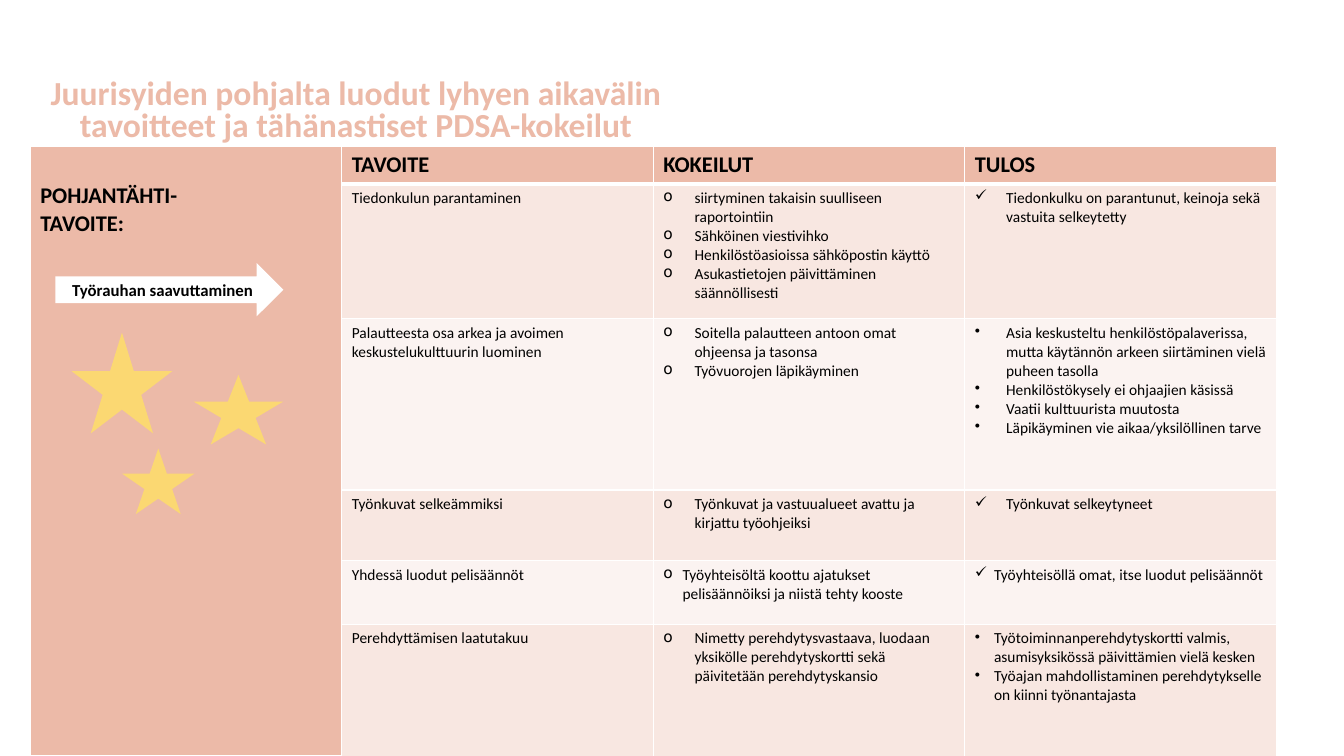
from dataclasses import dataclass

from lxml.etree import SubElement
from pptx import Presentation
from pptx.dml.color import RGBColor
from pptx.enum.shapes import MSO_SHAPE as Preset
from pptx.enum.text import MSO_ANCHOR as Anchor, MSO_AUTO_SIZE as AutoSize, PP_ALIGN as Align
from pptx.oxml.ns import qn
from pptx.util import Pt

PX = 9144


@dataclass(frozen=True)
class Theme:
    font: str = "Calibri"
    peach: str = "ECBAA8"
    band: tuple = ("F8E7E1", "FBF3F1")
    white: str = "FFFFFF"
    black: str = "000000"
    star: str = "FBD872"
    title: int = 24
    heading: int = 16
    label: int = 12
    body: int = 11


THEME = Theme()
TITLE = "Juurisyiden pohjalta luodut lyhyen aikavälin tavoitteet ja tähänastiset PDSA-kokeilut"
NORTH_STAR = "POHJANTÄHTI-\nTAVOITE:"
HEADINGS = ["TAVOITE", "KOKEILUT", "TULOS"]
ROW_HEIGHTS = [36, 134, 170, 70, 63, 132]
WIDE, NARROW = 31, 19
GOALS = [
    ("Tiedonkulun parantaminen",
     ("o", WIDE, ["siirtyminen takaisin suulliseen raportointiin",
                  "Sähköinen viestivihko",
                  "Henkilöstöasioissa sähköpostin käyttö",
                  "Asukastietojen päivittäminen säännöllisesti"]),
     ("✓", WIDE, ["Tiedonkulku on parantunut, keinoja sekä vastuita selkeytetty"])),
    ("Palautteesta osa arkea ja avoimen keskustelukulttuurin luominen",
     ("o", WIDE, ["Soitella palautteen antoon omat ohjeensa ja tasonsa",
                  "Työvuorojen läpikäyminen"]),
     ("•", WIDE, ["Asia keskusteltu henkilöstöpalaverissa, mutta käytännön arkeen "
                  "siirtäminen vielä puheen tasolla",
                  "Henkilöstökysely ei ohjaajien käsissä",
                  "Vaatii kulttuurista muutosta",
                  "Läpikäyminen vie aikaa/yksilöllinen tarve"])),
    ("Työnkuvat selkeämmiksi",
     ("o", WIDE, ["Työnkuvat ja vastuualueet avattu ja kirjattu työohjeiksi"]),
     ("✓", WIDE, ["Työnkuvat selkeytyneet"])),
    ("Yhdessä luodut pelisäännöt",
     ("o", NARROW, ["Työyhteisöltä koottu ajatukset pelisäännöiksi ja niistä tehty kooste"]),
     ("✓", NARROW, ["Työyhteisöllä omat, itse luodut pelisäännöt"])),
    ("Perehdyttämisen laatutakuu",
     ("o", WIDE, ["Nimetty perehdytysvastaava, luodaan yksikölle perehdytyskortti sekä "
                  "päivitetään perehdytyskansio"]),
     ("•", NARROW, ["Työtoiminnanperehdytyskortti valmis, asumisyksikössä päivittämien vielä kesken",
                    "Työajan mahdollistaminen perehdytykselle on kiinni työnantajasta"])),
]


def scaled(*lengths):
    return [length * PX for length in lengths]


def format_text(frame, size, color, bold=False):
    for para in frame.paragraphs:
        for span in para.runs:
            span.font.name = THEME.font
            span.font.size = Pt(size)
            span.font.bold = bold
            span.font.color.rgb = RGBColor.from_string(color)


def add_bullet(para, mark, indent):
    properties = para._p.get_or_add_pPr()
    properties.set("marL", str(indent * PX))
    properties.set("indent", str(-indent * PX))
    SubElement(properties, qn("a:buChar"), char=mark)


def style_cell(cell, color, bottom_width=1):
    properties = cell._tc.get_or_add_tcPr()
    for side, width in (("lnL", 1), ("lnR", 1), ("lnT", 1), ("lnB", bottom_width)):
        line = SubElement(properties, qn(f"a:{side}"), w=str(Pt(width)))
        paint = SubElement(line, qn("a:solidFill"))
        SubElement(paint, qn("a:srgbClr"), val=THEME.white)
    cell.fill.solid()
    cell.fill.fore_color.rgb = RGBColor.from_string(color)


def write_heading(cell, text):
    cell.text_frame.text = text
    format_text(cell.text_frame, THEME.heading, THEME.black, True)
    style_cell(cell, THEME.peach, 3)


def write_bullets(cell, mark, indent, items):
    cell.text_frame.text = "\n".join(items)
    for para in cell.text_frame.paragraphs:
        add_bullet(para, mark, indent)


def add_title(slide, box):
    title = slide.shapes.title
    title.left, title.top, title.width, title.height = scaled(*box)
    frame = title.text_frame
    frame.text = TITLE
    frame.word_wrap = True
    frame.auto_size = AutoSize.NONE
    frame.vertical_anchor = Anchor.MIDDLE
    frame.margin_left = frame.margin_top = frame.margin_right = frame.margin_bottom = 0
    frame.paragraphs[0].alignment = Align.CENTER
    frame.paragraphs[0].line_spacing = 0.8
    format_text(frame, THEME.title, THEME.peach, True)


def add_goal_table(slide, box):
    table = slide.shapes.add_table(len(ROW_HEIGHTS), 4, *scaled(*box)).table
    for column in table.columns:
        column.width = box[2] * PX // 4
    for row, height in zip(table.rows, ROW_HEIGHTS):
        row.height = height * PX
    north_star = table.cell(0, 0)
    north_star.merge(table.cell(len(ROW_HEIGHTS) - 1, 0))
    write_heading(north_star, NORTH_STAR)
    north_star.margin_top = 36 * PX
    for column, heading in enumerate(HEADINGS, 1):
        write_heading(table.cell(0, column), heading)
    for row, (goal, trials, result) in enumerate(GOALS, 1):
        table.cell(row, 1).text_frame.text = goal
        write_bullets(table.cell(row, 2), *trials)
        write_bullets(table.cell(row, 3), *result)
        for column in range(1, 4):
            cell = table.cell(row, column)
            format_text(cell.text_frame, THEME.body, THEME.black)
            style_cell(cell, THEME.band[(row - 1) % 2])


def add_plain_shape(slide, preset, box, color):
    shape = slide.shapes.add_shape(preset, *scaled(*box))
    shape.shadow.inherit = False
    shape.fill.solid()
    shape.fill.fore_color.rgb = RGBColor.from_string(color)
    shape.line.fill.background()
    return shape


def add_north_star_art(slide, box):
    left, top = box[:2]
    arrow = add_plain_shape(slide, Preset.RIGHT_ARROW, (left, top, box[2], 53), THEME.white)
    frame = arrow.text_frame
    frame.text = "Työrauhan saavuttaminen"
    frame.word_wrap = True
    frame.vertical_anchor = Anchor.MIDDLE
    frame.paragraphs[0].alignment = Align.CENTER
    format_text(frame, THEME.label, THEME.black, True)
    for x, y, width, height in ((137, 111, 89, 69), (16, 69, 100, 100), (66, 184, 72, 65)):
        add_plain_shape(slide, Preset.STAR_5_POINT, (left + x, top + y, width, height), THEME.star)


def main():
    deck = Presentation()
    deck.slide_width, deck.slide_height = scaled(1333, 750)
    slide = deck.slides.add_slide(deck.slide_layouts[5])
    add_title(slide, (48, 76, 610, 70))
    add_goal_table(slide, (30, 145, 1236, sum(ROW_HEIGHTS)))
    add_north_star_art(slide, (55, 261, 226, 249))
    deck.save("out.pptx")


if __name__ == "__main__":
    main()
